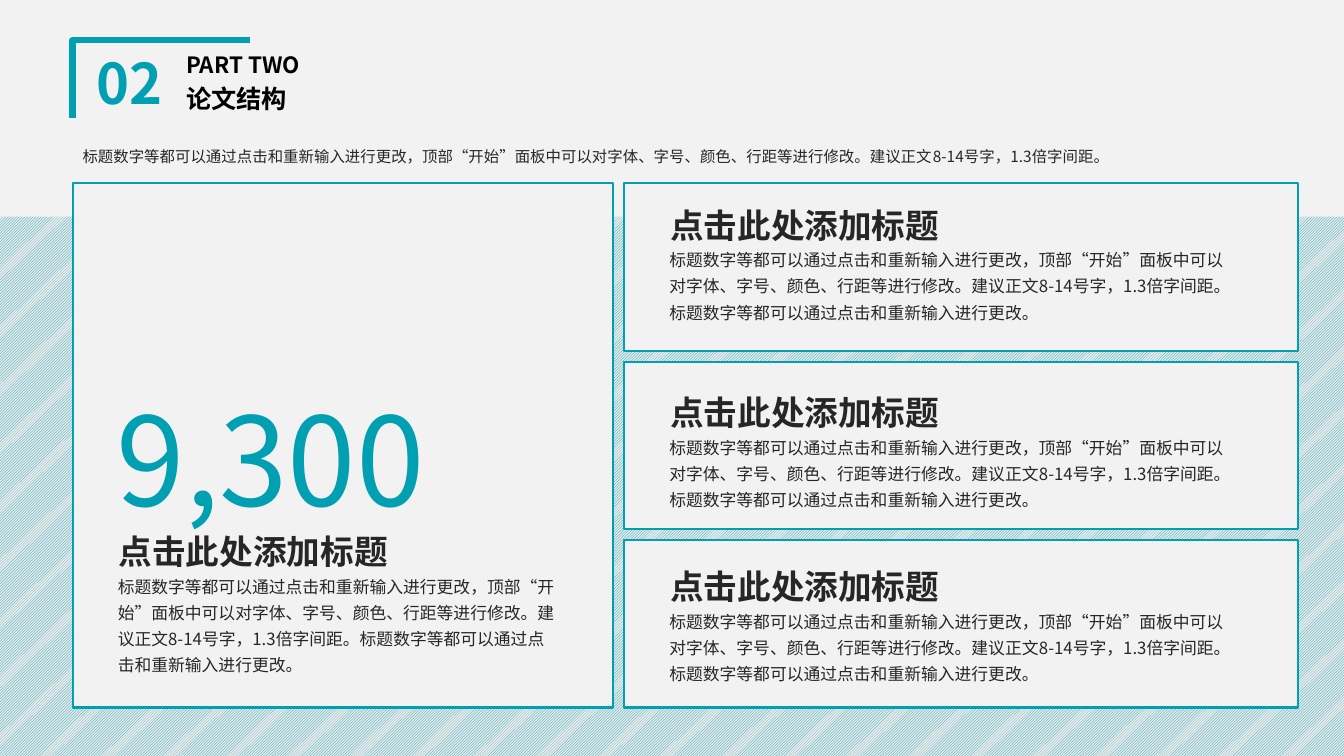
from lxml.etree import SubElement
from pptx import Presentation
from pptx.dml.color import RGBColor
from pptx.enum.dml import MSO_PATTERN
from pptx.enum.shapes import MSO_SHAPE
from pptx.enum.text import MSO_ANCHOR, MSO_AUTO_SIZE, PP_ALIGN
from pptx.oxml.ns import qn
from pptx.util import Inches, Pt

FONT = "Noto Sans CJK SC"
TEAL, PAPER, INK, BLACK = "009FB1", "F2F2F2", "262626", "000000"
HEADING = "点击此处添加标题"
INTRO = ("标题数字等都可以通过点击和重新输入进行更改，顶部“开始”面板中可以对字体、字号、"
         "颜色、行距等进行修改。建议正文8-14号字，1.3倍字间距。")
BODY = INTRO + "标题数字等都可以通过点击和重新输入进行更改。"


def color(hex_value):
    return RGBColor.from_string(hex_value)


def add_text(slide, box, text, size, ink=INK, bold=False, spacing=None,
             align=None, middle=False, wrap=True):
    label = slide.shapes.add_textbox(*map(Inches, box))
    frame = label.text_frame
    frame.text = text
    frame.word_wrap = wrap
    if middle:
        frame.vertical_anchor = MSO_ANCHOR.MIDDLE
    else:
        frame.auto_size = MSO_AUTO_SIZE.SHAPE_TO_FIT_TEXT
    paragraph = frame.paragraphs[0]
    paragraph.alignment = align
    paragraph.line_spacing = spacing
    run = paragraph.runs[0]
    run.font.size = Pt(size)
    run.font.bold = bold
    run.font.color.rgb = color(ink)
    run.font.name = FONT
    # East Asian typeface and language
    properties = run.font._element
    properties.set("lang", "zh-CN")
    SubElement(properties, qn("a:ea")).set("typeface", FONT)


def add_backdrop(slide, box):
    slide.background.fill.solid()
    slide.background.fill.fore_color.rgb = color(PAPER)
    hatching = slide.shapes.add_shape(MSO_SHAPE.RECTANGLE, *map(Inches, box))
    hatching.shadow.inherit = False
    hatching.line.fill.background()
    hatching.fill.patterned()
    hatching.fill.pattern = MSO_PATTERN.LIGHT_UPWARD_DIAGONAL
    hatching.fill.fore_color.rgb = color(TEAL)
    hatching.fill.back_color.rgb = color("E9E9E9")


def add_header(slide, box):
    left, top, width, height = box
    # Corner bracket
    builder = slide.shapes.build_freeform(Inches(left), Inches(top + height))
    builder.add_line_segments([(Inches(left), Inches(top)),
                               (Inches(left + width), Inches(top))], close=False)
    bracket = builder.convert_to_shape()
    bracket.shadow.inherit = False
    bracket.fill.background()
    bracket.line.color.rgb = color(TEAL)
    bracket.line.width = Pt(4.5)
    # Section number and names
    add_text(slide, (left + 0.1, top + 0.09, 0.93, 0.73), "02", 40, TEAL, True,
             0.9, PP_ALIGN.CENTER, middle=True)
    add_text(slide, (left + 1.03, top + 0.09, 2.67, 0.34), "PART TWO", 16, BLACK,
             True, 0.9, middle=True)
    add_text(slide, (left + 1.03, top + 0.38, 2.67, 0.44), "论文结构", 18, BLACK,
             True, 0.9, middle=True)


def add_card(slide, box, heading_drop, body_width, body_height):
    left, top, _, _ = box
    panel = slide.shapes.add_shape(MSO_SHAPE.RECTANGLE, *map(Inches, box))
    panel.shadow.inherit = False
    panel.fill.solid()
    panel.fill.fore_color.rgb = color(PAPER)
    panel.line.color.rgb = color(TEAL)
    panel.line.width = Pt(1.5)
    add_text(slide, (left + 0.36, top + heading_drop, 2.87, 0.5), HEADING, 24,
             bold=True, wrap=False)
    add_text(slide, (left + 0.35, top + heading_drop + 0.39, body_width, body_height),
             BODY, 12, spacing=1.3)


def add_figure_card(slide, box):
    left, top, _, _ = box
    add_card(slide, box, 3.4, 4.56, 1.14)
    add_text(slide, (left + 0.34, top + 1.93, 4.98, 1.57), "9,300", 88, TEAL)


def add_card_column(slide, box):
    left, top, width, height = box
    gap = 0.11
    heading_drops = (0.16, 0.25, 0.21)
    count = len(heading_drops)
    card_height = (height - gap * (count - 1)) / count
    for row, drop in enumerate(heading_drops):
        card_top = top + row * (card_height + gap)
        add_card(slide, (left, card_top, width, card_height), drop, 5.83, 0.88)


def main():
    deck = Presentation()
    deck.slide_width, deck.slide_height = Inches(13.33), Inches(7.5)
    slide = deck.slides.add_slide(deck.slide_layouts[6])
    add_backdrop(slide, (-0.02, 2.15, 13.35, 5.35))
    add_header(slide, (0.72, 0.4, 1.76, 0.77))
    add_text(slide, (0.72, 1.36, 12.15, 0.34), INTRO, 11, spacing=1.3)
    add_figure_card(slide, (0.72, 1.82, 5.36, 5.2))
    add_card_column(slide, (6.19, 1.82, 6.68, 5.2))
    deck.save("out.pptx")


if __name__ == "__main__":
    main()
